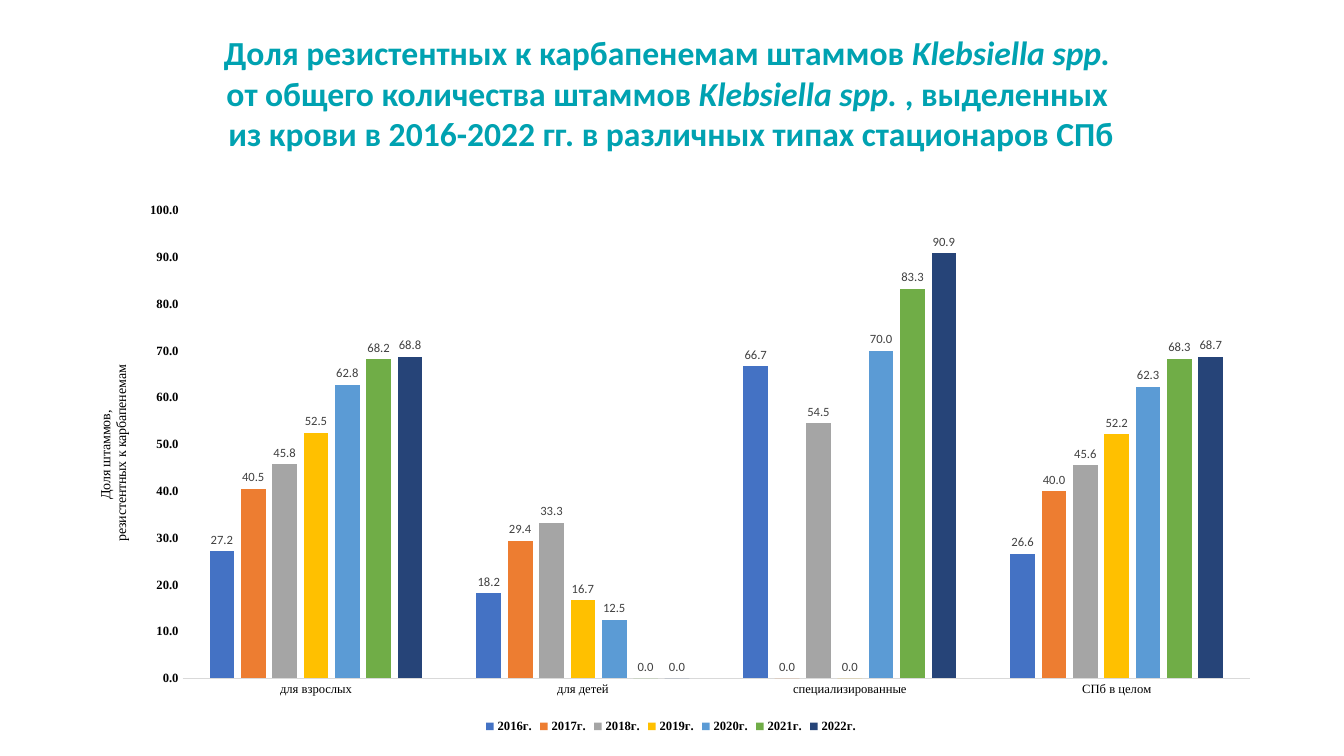
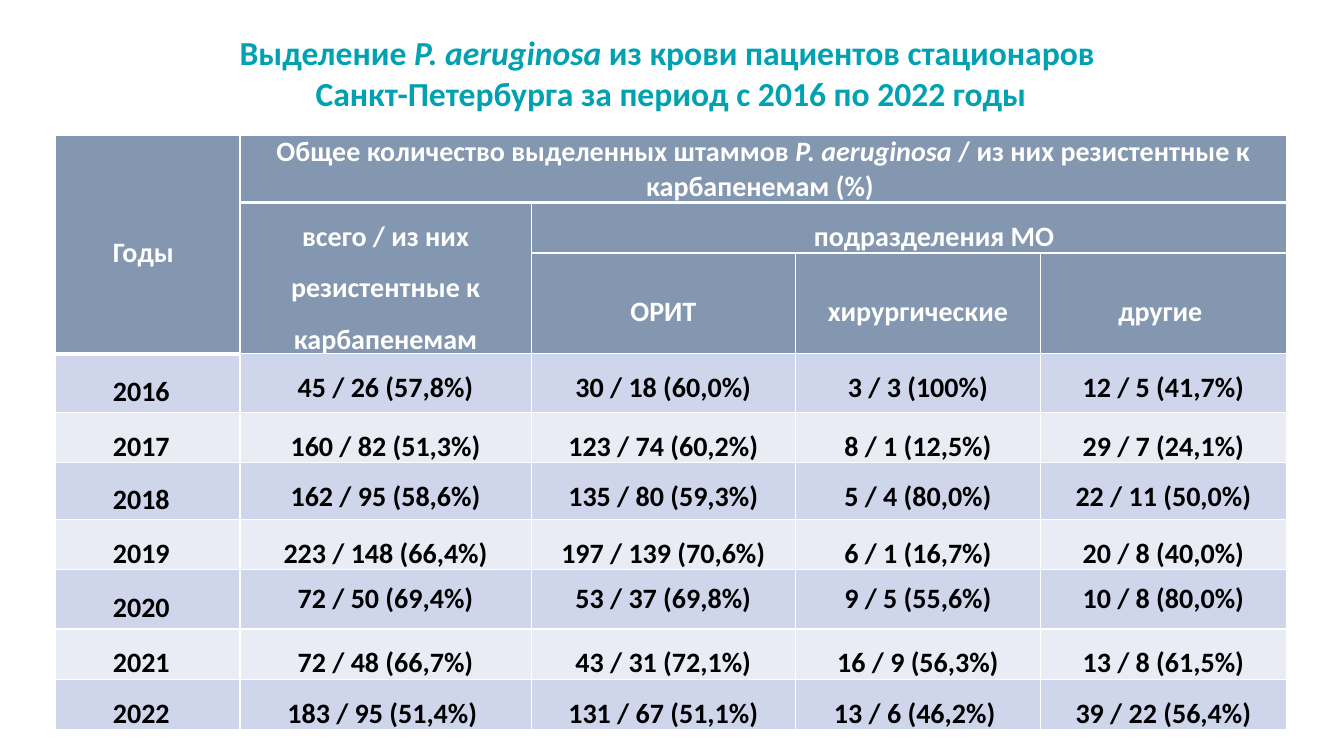
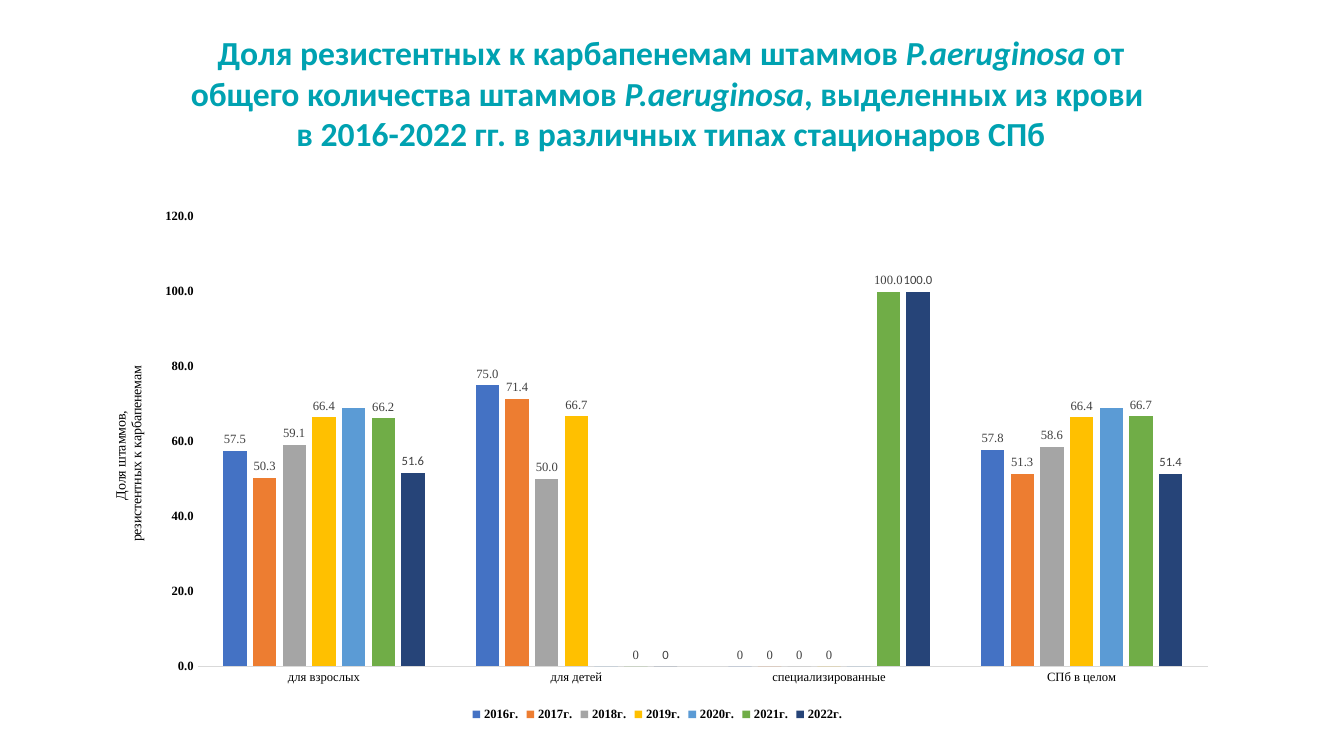
from lxml import etree
from pptx import Presentation
from pptx.chart.data import CategoryChartData
from pptx.dml.color import RGBColor
from pptx.enum.chart import (XL_CHART_TYPE, XL_LABEL_POSITION,
                             XL_LEGEND_POSITION, XL_TICK_MARK)
from pptx.enum.text import MSO_ANCHOR, PP_ALIGN
from pptx.oxml.ns import qn
from pptx.util import Pt

# Scale: 100 px to the inch
PX = 9144
SIZE = (1333, 750)

# Shared look
SANS, SERIF = "Calibri", "Times New Roman"
TEAL = RGBColor(0x00, 0xA2, 0xB1)
WHITE = RGBColor(0xFF, 0xFF, 0xFF)
BLACK = RGBColor(0x00, 0x00, 0x00)
GRAY = RGBColor(0x40, 0x40, 0x40)
RULE = RGBColor(0xD9, 0xD9, 0xD9)
SLATE = RGBColor(0x84, 0x97, 0xB0)
BANDS = (RGBColor(0xCF, 0xD5, 0xEA), RGBColor(0xE9, 0xEB, 0xF5))
HUES = (RGBColor(0x44, 0x72, 0xC4), RGBColor(0xED, 0x7D, 0x31),
        RGBColor(0xA5, 0xA5, 0xA5), RGBColor(0xFF, 0xC0, 0x00),
        RGBColor(0x5B, 0x9B, 0xD5), RGBColor(0x70, 0xAD, 0x47),
        RGBColor(0x26, 0x44, 0x78))

CENTER, LEFT = PP_ALIGN.CENTER, PP_ALIGN.LEFT
MIDDLE, TOP = MSO_ANCHOR.MIDDLE, MSO_ANCHOR.TOP
COLUMN = XL_CHART_TYPE.COLUMN_CLUSTERED
OUTSIDE = XL_LABEL_POSITION.OUTSIDE_END
BOTTOM = XL_LEGEND_POSITION.BOTTOM
NO_TICK = XL_TICK_MARK.NONE

YEARS = range(2016, 2023)
UNITS = ("для взрослых", "для детей", "cпециализированные", "СПб в целом")
INSET = (114, 17, 24, 59)  # plot margins: left, top, right, bottom

# Chart values, one row per year
KLEB = ((27.2, 18.2, 66.7, 26.6), (40.5, 29.4, 0, 40), (45.8, 33.3, 54.5, 45.6),
        (52.5, 16.7, 0, 52.2), (62.8, 12.5, 70, 62.3), (68.2, 0, 83.3, 68.3),
        (68.8, 0, 90.9, 68.7))
PSEUD = ((57.5, 75, 0, 57.8), (50.3, 71.4, 0, 51.3), (59.1, 50, 0, 58.6),
         (66.4, 66.7, 0, 66.4), (69, 0, 0, 69), (66.2, 0, 100, 66.7),
         (51.6, 0, 100, 51.4))

# Table content: (row, col, last row, last col, text)
HEAD = (
    (0, 0, 2, 0, "Годы"),
    (0, 1, 0, 4, "Общее количество выделенных штаммов *P. aeruginosa *"
                 "/ из них резистентные к карбапенемам (%) "),
    (1, 1, 2, 1, "всего / из них резистентные к карбапенемам"),
    (1, 2, 1, 4, "подразделения МО"),
    (2, 2, 2, 2, "ОРИТ"),
    (2, 3, 2, 3, "хирургические"),
    (2, 4, 2, 4, "другие "),
)
BODY = (
    ("45 / 26 (57,8%)", "30 / 18 (60,0%)", "3 / 3 (100%)", "12 / 5 (41,7%)"),
    ("160 / 82 (51,3%)", "123 / 74 (60,2%)", "8 / 1 (12,5%)", "29 / 7 (24,1%)"),
    ("162 / 95 (58,6%)", "135 / 80 (59,3%)", "5 / 4 (80,0%)", "22 / 11 (50,0%)"),
    ("223 / 148 (66,4%)", "197 / 139 (70,6%)", "6 / 1 (16,7%)", "20 / 8 (40,0%)"),
    ("72 / 50 (69,4%)", "53 / 37 (69,8%)", "9 / 5 (55,6%)", "10 / 8 (80,0%)"),
    ("72 / 48 (66,7%)", "43 / 31 (72,1%)", "16 / 9 (56,3%)", "13 / 8 (61,5%)"),
    ("183 / 95 (51,4%) ", "131 / 67 (51,1%)", "13 / 6 (46,2%) ", "39 / 22 (56,4%)"),
)
COLS = (183, 289, 262, 243, 244)
ROWS = (67, 50, 100, 58, 50, 56, 50, 59, 50, 50)


def emu(*vals):
    return [int(v * PX) for v in vals]


def style(font, size, color, name, bold=False):
    font.size, font.name, font.bold = Pt(size), name, bold
    font.color.rgb = color


def write(para, text, size, color):
    """Add bold runs; parts between asterisks are italic."""
    for i, part in enumerate(text.split("*")):
        for j, line in enumerate(part.split("\n")):
            if j:
                para.add_line_break()
            if line:
                run = para.add_run()
                run.text = line
                style(run.font, size, color, SANS, True)
                run.font.italic = i % 2 == 1


def title(slide, box, text):
    frame = slide.shapes.add_textbox(*emu(*box)).text_frame
    frame.word_wrap = True
    para = frame.paragraphs[0]
    para.alignment = CENTER
    write(para, text, 24, TEAL)


# Charts
def layout(parent, index, **vals):
    """Fix the place of a chart part by fractions of the chart."""
    for old in parent.findall(qn("c:layout")):
        parent.remove(old)
    node = etree.Element(qn("c:layout"))
    parent.insert(index, node)
    manual = etree.SubElement(node, qn("c:manualLayout"))
    for tag, val in vals.items():
        etree.SubElement(manual, qn("c:" + tag)).set("val", str(val))


def axes(chart, top, step):
    cat, val = chart.category_axis, chart.value_axis
    for axis in (cat, val):
        axis.major_tick_mark = axis.minor_tick_mark = NO_TICK
        axis.has_major_gridlines = False
        style(axis.tick_labels.font, 9, BLACK, SERIF, axis is val)
    cat.format.line.color.rgb = RULE
    cat.format.line.width = Pt(0.75)
    val.format.line.fill.background()
    val.minimum_scale, val.maximum_scale, val.major_unit = 0, top, step
    val.tick_labels.number_format = "0.0"
    val.tick_labels.number_format_is_linked = False
    # Axis title
    frame = val.axis_title.text_frame
    for i, line in enumerate(("Доля штаммов, ", "резистентных к карбапенемам")):
        para = frame.add_paragraph() if i else frame.paragraphs[0]
        run = para.add_run()
        run.text = line
        style(run.font, 10, BLACK, SERIF)
    body = frame._txBody.find(qn("a:bodyPr"))
    body.set("rot", "-5400000")
    body.set("vert", "horz")
    return val.axis_title._element


def bars(slide, box, rows, top, step, fonts, form):
    data = CategoryChartData(number_format="0.0")
    data.categories = UNITS
    for year, vals in zip(YEARS, rows):
        data.add_series(f"{year}г.", vals)
    chart = slide.shapes.add_chart(COLUMN, *emu(*box), data).chart
    chart.has_title = False
    style(chart.font, 10, BLACK, SANS)
    chart.has_legend = True
    chart.legend.position = BOTTOM
    chart.legend.include_in_layout = False
    style(chart.legend.font, 9, BLACK, SERIF, True)
    # Series and labels
    plot = chart.plots[0]
    plot.gap_width, plot.overlap, plot.vary_by_categories = 219, -27, False
    for series, hue, name in zip(plot.series, HUES, fonts):
        series.format.fill.solid()
        series.format.fill.fore_color.rgb = hue
        series.invert_if_negative = False
        if name:
            tags = series.data_labels
            tags.show_value = True
            tags.number_format = form
            tags.number_format_is_linked = False
            tags.position = OUTSIDE
            style(tags.font, 9, GRAY, name)
    # Places of the plot and the axis title
    label = axes(chart, top, step)
    wide, high = box[2:]
    left, head, right, foot = INSET
    layout(label, 1, xMode="edge", yMode="edge", x=25 / wide, y=0.31)
    layout(chart._chartSpace.find(".//" + qn("c:plotArea")), 0,
           layoutTarget="inner", xMode="edge", yMode="edge",
           x=left / wide, y=head / high,
           w=(wide - left - right) / wide, h=(high - head - foot) / high)


# Table
def fill(cell, text, color, align=CENTER, space=1.5, indent=0, anchor=MIDDLE):
    cell.vertical_anchor = anchor
    para = cell.text_frame.paragraphs[0]
    para.alignment, para.line_spacing = align, space
    if indent:
        para._p.get_or_add_pPr().set("marL", str(indent * PX))
    write(para, text, 20, color)


def edges(cell, row, col):
    """White lines, heavy under the first header cell of each column."""
    heavy = 1 if col else 3
    ends = {"lnL": None, "lnR": None, "lnT": row, "lnB": row + cell.span_height}
    props = cell._tc.get_or_add_tcPr()
    for tag, at in ends.items():
        line = etree.SubElement(props, qn("a:" + tag))
        line.set("w", str(Pt(3 if at == heavy else 1)))
        solid = etree.SubElement(line, qn("a:solidFill"))
        etree.SubElement(solid, qn("a:srgbClr")).set("val", str(WHITE))


def grid(slide, left, top):
    table = slide.shapes.add_table(
        len(ROWS), len(COLS), *emu(left, top, sum(COLS), sum(ROWS))).table
    table.first_row = table.horz_banding = False
    for col, wide in zip(table.columns, COLS):
        col.width = wide * PX
    for row, high in zip(table.rows, ROWS):
        row.height = high * PX
    # Header
    for row, col, last, end, text in HEAD:
        cell = table.cell(row, col)
        if (row, col) != (last, end):
            cell.merge(table.cell(last, end))
        fill(cell, text, WHITE, CENTER if col else LEFT,
             1 if row == 0 and col else 1.5,
             50 if (row, col) in ((0, 0), (1, 2)) else 0)
    # Years and counts
    for row, (year, vals) in enumerate(zip(YEARS, BODY), 3):
        fill(table.cell(row, 0), str(year), BLACK, LEFT, indent=50)
        for col, text in enumerate(vals, 1):
            fill(table.cell(row, col), text, BLACK,
                 space=1 if year == 2020 else 1.5,
                 anchor=TOP if year < 2020 else MIDDLE)
    # Margins, lines and fills
    for row in range(len(ROWS)):
        for col in range(len(COLS)):
            cell = table.cell(row, col)
            cell.margin_left = cell.margin_right = 7 * PX
            cell.margin_top = cell.margin_bottom = 0
            edges(cell, row, col)
            cell.fill.solid()
            cell.fill.fore_color.rgb = SLATE if row < 3 else BANDS[(row - 3) % 2]


def main():
    deck = Presentation()
    deck.slide_width, deck.slide_height = emu(*SIZE)
    first, second, third = [deck.slides.add_slide(deck.slide_layouts[6])
                            for _ in range(3)]

    title(first, (165, 27, 1001, 131),
          "Доля резистентных к карбапенемам штаммов *Klebsiella spp. \n*"
          "от общего количества штаммов *Klebsiella spp. *, выделенных \n"
          "из крови в 2016-2022 гг. в различных типах стационаров СПб")
    bars(first, (67, 192, 1197, 540), KLEB, 100, 10, [SANS] * 7, "0.0")

    title(second, (165, 27, 1001, 91),
          "Выделение *P. aeruginosa *из крови пациентов стационаров \n"
          "Санкт-Петербурга за период с 2016 по 2022 годы")
    grid(second, 55, 134)

    title(third, (165, 27, 1001, 131),
          "Доля резистентных к карбапенемам штаммов *P.aeruginosa *от "
          "общего количества штаммов *P.aeruginosa*, выделенных из крови \n"
          "в 2016-2022 гг. в различных типах стационаров СПб")
    bars(third, (82, 198, 1140, 522), PSEUD, 120, 20,
         [SERIF] * 4 + [None, SERIF, SANS], "0.0;-0.0;0")

    deck.save("out.pptx")


if __name__ == "__main__":
    main()
